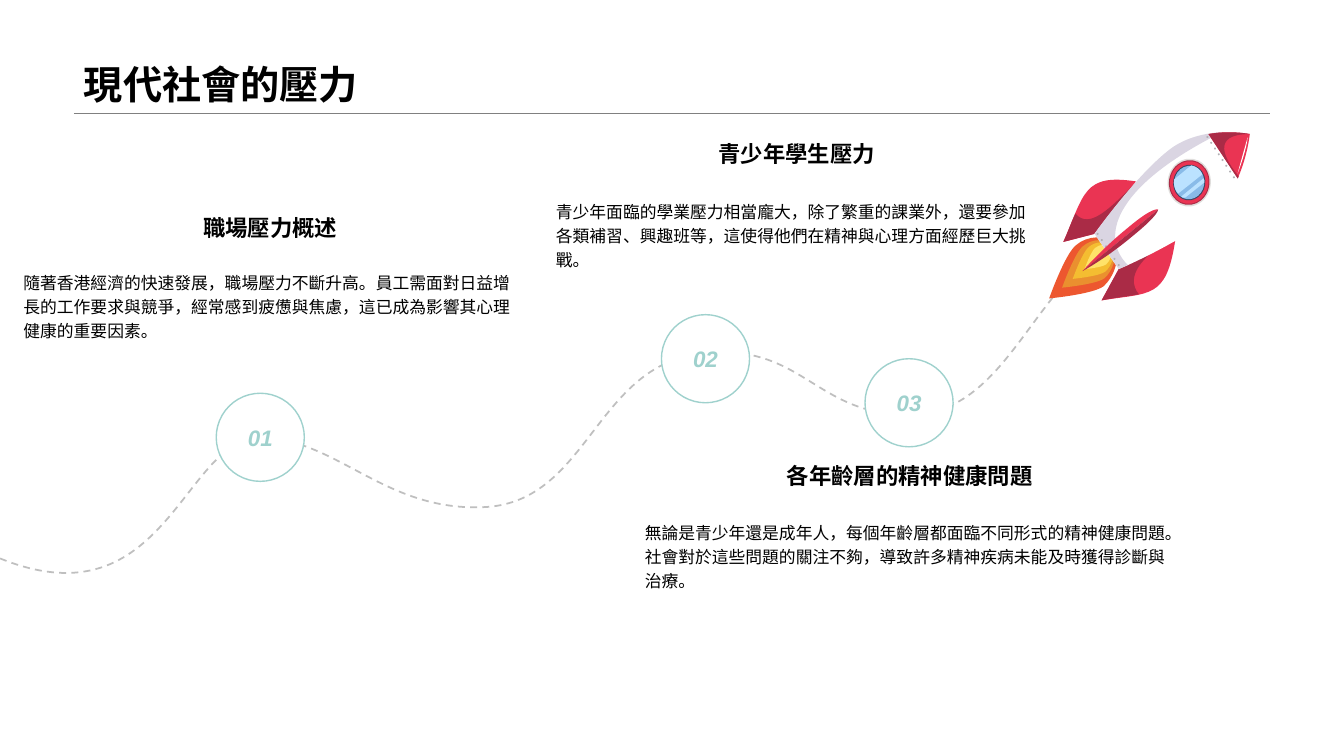
from lxml import etree
from pptx import Presentation
from pptx import util as u
from pptx.dml.color import RGBColor
from pptx.enum import dml, shapes, text
from pptx.oxml.ns import qn

UNIT = u.Cm(2.54) / 100
SANS = "Noto Sans CJK SC"
RED, DARK, TEAL, GREY = "EA3453", "AA2B46", "9FD1CD", "B3B0B5"

WAVE = [(0, 554), (165, 621, 182, 433, 259, 434), (336, 436, 383, 509, 483, 503),
        (584, 496, 591, 363, 695, 351), (798, 338, 809, 416, 908, 411),
        (1007, 406, 1029, 261, 1129, 229)]
FLAME = [(1095, 284), (1084, 292, 1041, 296, 1041, 296),
         (1041, 296, 1057, 251, 1068, 243), (1078, 234, 1098, 232, 1105, 243),
         (1113, 255, 1105, 275, 1095, 284)]
HULL = [
    (RED, [(1127, 180), (1075, 172, 1076, 192, 1055, 240), (1086, 232)]),
    (RED, [(1166, 239), (1157, 297, 1141, 290, 1093, 298), (1110, 267)]),
    (DARK, [(1093, 298), (1108, 295, 1120, 294, 1130, 292),
            (1124, 285, 1119, 271, 1142, 251), (1110, 267)]),
    (DARK, [(1055, 240), (1086, 232), (1127, 181),
            (1101, 207, 1081, 228, 1067, 212), (1063, 220, 1060, 229, 1055, 240)]),
    ("FFFFFF", [(1203, 213), (1235, 185, 1240, 133, 1240, 133),
                (1240, 133, 1194, 123, 1161, 148), (1128, 174, 1086, 232, 1086, 232),
                (1110, 267), (1110, 267, 1172, 241, 1203, 213)]),
    ("DAD5E2", [(1213, 131), (1197, 132, 1177, 136, 1161, 148),
                (1127, 174, 1086, 232, 1086, 232), (1110, 267), (1119, 263),
                (1089, 233, 1110, 182, 1213, 131)]),
    (RED, [(1228, 177), (1238, 154, 1240, 133, 1240, 133),
           (1240, 133, 1221, 129, 1199, 133)]),
    (DARK, [(1199, 133), (1228, 177), (1229, 175), (1216, 159, 1200, 133, 1240, 133),
            (1240, 133, 1221, 129, 1199, 133)]),
]
GLASS = [
    ("BBE2FF", [(1165, 178), (1164, 184, 1166, 189, 1169, 192), (1193, 173),
                (1191, 168, 1187, 165, 1182, 164)]),
    ("BBE2FF", [(1194, 177), (1172, 195), (1173, 196, 1174, 196, 1176, 196),
                (1195, 181), (1195, 179, 1195, 178, 1194, 177)]),
]
TRIM = [
    (RED, [(1149, 208), (1074, 269), (1074, 269, 1093, 247, 1119, 226),
           (1145, 204, 1149, 208, 1149, 208)]),
    (DARK, [(1149, 208), (1074, 269), (1074, 269, 1098, 256, 1124, 234),
            (1150, 213, 1149, 208, 1149, 208)]),
    ("FFFFFF", [(1238, 136), (1238, 136, 1237, 149, 1228, 172),
                (1228, 172, 1232, 157, 1238, 136)]),
]
RINGS = [(1.09, "E0DEDC"), (1.02, DARK), (0.97, RED), (0.81, "384460"), (0.76, "89BBE8")]
RIVETS = [(8, 1198, 136, 3.75, 5.7), (6, 1089, 232, 4.2, 6.2)]
STOPS = [("01", 5.45, 9.91), ("02", 16.67, 7.93), ("03", 21.8, 9.04)]
NOTES = [
    (0.34, 5.26, 6.65, 12.95, 1.7, "職場壓力概述",
     "隨著香港經濟的快速發展，職場壓力不斷升高。員工需面對日益增長的工作要求與競爭，"
     "經常感到疲憊與焦慮，這已成為影響其心理健康的重要因素。"),
    (13.76, 3.4, 4.85, 12.64, 1.42, "青少年學生壓力",
     "青少年面臨的學業壓力相當龐大，除了繁重的課業外，還要參加各類補習、興趣班等，"
     "這使得他們在精神與心理方面經歷巨大挑戰。"),
    (16, 11.52, 12.95, 13.86, 1.7, "各年齡層的精神健康問題",
     "無論是青少年還是成年人，每個年齡層都面臨不同形式的精神健康問題。"
     "社會對於這些問題的關注不夠，導致許多精神疾病未能及時獲得診斷與治療。"),
]


def tint(code):
    """Turn a hex string into a colour."""
    return RGBColor.from_string(code)


def write(shape, words, size=12, font=SANS, color="000000", bold=False, slant=False,
          align=text.PP_ALIGN.LEFT, anchor=text.MSO_ANCHOR.TOP, space=1.0,
          fit=text.MSO_AUTO_SIZE.NONE):
    """Fill a shape with one formatted paragraph."""
    frame = shape.text_frame
    frame.word_wrap = True
    frame.auto_size = fit
    frame.vertical_anchor = anchor
    para = frame.paragraphs[0]
    para.alignment, para.line_spacing = align, space
    run = para.add_run()
    run.text = words
    run.font.size, run.font.name = u.Pt(size), font
    run.font.bold, run.font.italic = bold, slant
    run.font.color.rgb = tint(color)
    etree.SubElement(run._r.get_or_add_rPr(), qn("a:ea"), typeface=font)


def paint(shape, fill=None, line=None, width=1):
    """Set fill and line, and drop the shadow."""
    shape.shadow.inherit = False
    if fill:
        shape.fill.solid()
        shape.fill.fore_color.rgb = tint(fill)
    else:
        shape.fill.background()
    if line:
        shape.line.color.rgb = tint(line)
        shape.line.width = u.Pt(width)
    else:
        shape.line.fill.background()


def trace(route, steps=16):
    """Return points along a route, to find its bounds."""
    points = [route[0]]
    for part in route[1:]:
        knots = [points[-1], *zip(part[::2], part[1::2])]
        if len(part) == 2:
            points.append(part)
            continue
        for step in range(1, steps + 1):
            t = step / steps
            mix = ((1 - t) ** 3, 3 * t * (1 - t) ** 2, 3 * t * t * (1 - t), t ** 3)
            points.append(tuple(sum(m * k[axis] for m, k in zip(mix, knots))
                                for axis in (0, 1)))
    return [(x * UNIT, y * UNIT) for x, y in points]


def outline(tree, route, close=True, **look):
    """Draw a route of straight and cubic parts as a freeform."""
    points = trace(route)
    pen = tree.build_freeform(*points[0], scale=1.0)
    pen.add_line_segments(points[1:], close=close)
    shape = pen.convert_to_shape()
    left, top = (min(axis) for axis in zip(*points))
    track = next(shape._element.iter(qn("a:path")))
    for node in list(track):
        track.remove(node)
    for i, part in enumerate(route):
        kind = "a:moveTo" if i == 0 else "a:lnTo" if len(part) == 2 else "a:cubicBezTo"
        node = etree.SubElement(track, qn(kind))
        for x, y in zip(part[::2], part[1::2]):
            etree.SubElement(node, qn("a:pt"), x=str(round(x * UNIT - left)),
                             y=str(round(y * UNIT - top)))
    if close:
        etree.SubElement(track, qn("a:close"))
    paint(shape, **look)
    return shape


def disc(tree, x, y, wide, high, **look):
    """Draw an ellipse around a centre."""
    shape = tree.add_shape(shapes.MSO_SHAPE.OVAL, u.Cm(x - wide / 2), u.Cm(y - high / 2),
                           u.Cm(wide), u.Cm(high))
    paint(shape, **look)
    return shape


def shrink(route, ratio, x=1099.3, y=247.7):
    """Scale a route about a point."""
    return [tuple(v * ratio + (1 - ratio) * (y if i % 2 else x)
                  for i, v in enumerate(part)) for part in route]


def rocket(tree):
    """Draw the rocket as one group."""
    group = tree.add_group_shape().shapes
    for ratio, fill in ((1, "ED572F"), (0.78, "EA902F"), (0.6, "F4BD31"), (0.4, "FFE269")):
        outline(group, shrink(FLAME, ratio), fill=fill)
    for fill, route in HULL:
        outline(group, route, fill=fill)
    for wide, fill in RINGS:
        disc(group, 29.97, 4.6, wide, wide * 1.11, fill=fill).rotation = 8.7
    for fill, route in GLASS:
        outline(group, route, fill=fill)
    for count, x, y, dx, dy in RIVETS:
        for i in range(count):
            disc(group, (x + i * dx) * 0.0254, (y + i * dy) * 0.0254, 0.05, 0.05, fill=GREY)
    for fill, route in TRIM:
        outline(group, route, fill=fill)


def head(slide, words):
    """Place the title and the rule below it."""
    title = slide.shapes.title
    title.left, title.top = u.Cm(1.86), u.Cm(0)
    title.width, title.height = u.Cm(30.15), u.Cm(2.85)
    write(title, words, size=28, font="Arial", bold=True,
          anchor=text.MSO_ANCHOR.BOTTOM, space=0.9)
    rule = slide.shapes.add_connector(shapes.MSO_CONNECTOR.STRAIGHT, u.Cm(1.86), u.Cm(2.85),
                                      u.Cm(32), u.Cm(2.85))
    rule.line.color.rgb = tint("808080")
    rule.line.width = u.Pt(0.25)
    etree.SubElement(rule._element.spPr, qn("a:effectLst"))


def note(tree, x, y, low, wide, high, topic, words):
    """Place a heading and the text below it."""
    grow = text.MSO_AUTO_SIZE.SHAPE_TO_FIT_TEXT
    body = tree.add_textbox(u.Cm(x), u.Cm(low), u.Cm(wide), u.Cm(high))
    write(body, words, space=1.2, fit=grow)
    label = tree.add_textbox(u.Cm(x), u.Cm(y), u.Cm(wide), u.Cm(0.94))
    write(label, topic, size=16, bold=True, align=text.PP_ALIGN.CENTER, fit=grow)


def main():
    """Build and save the slide."""
    deck = Presentation()
    deck.slide_width, deck.slide_height = u.Cm(33.87), u.Cm(19.05)
    slide = deck.slides.add_slide(deck.slide_layouts[5])
    tree = slide.shapes
    head(slide, "現代社會的壓力")
    wave = outline(tree, WAVE, close=False, line="BFBFBF", width=1.25)
    wave.line.dash_style = dml.MSO_LINE.DASH
    rocket(tree)
    for label, x, y in STOPS:
        stop = disc(tree, x + 1.11, y + 1.11, 2.22, 2.22, fill="FFFFFF", line=TEAL)
        write(stop, label, size=16, font="Arial", color=TEAL, bold=True, slant=True,
              align=text.PP_ALIGN.CENTER, anchor=text.MSO_ANCHOR.MIDDLE)
    for item in NOTES:
        note(tree, *item)
    deck.save("out.pptx")


if __name__ == "__main__":
    main()
